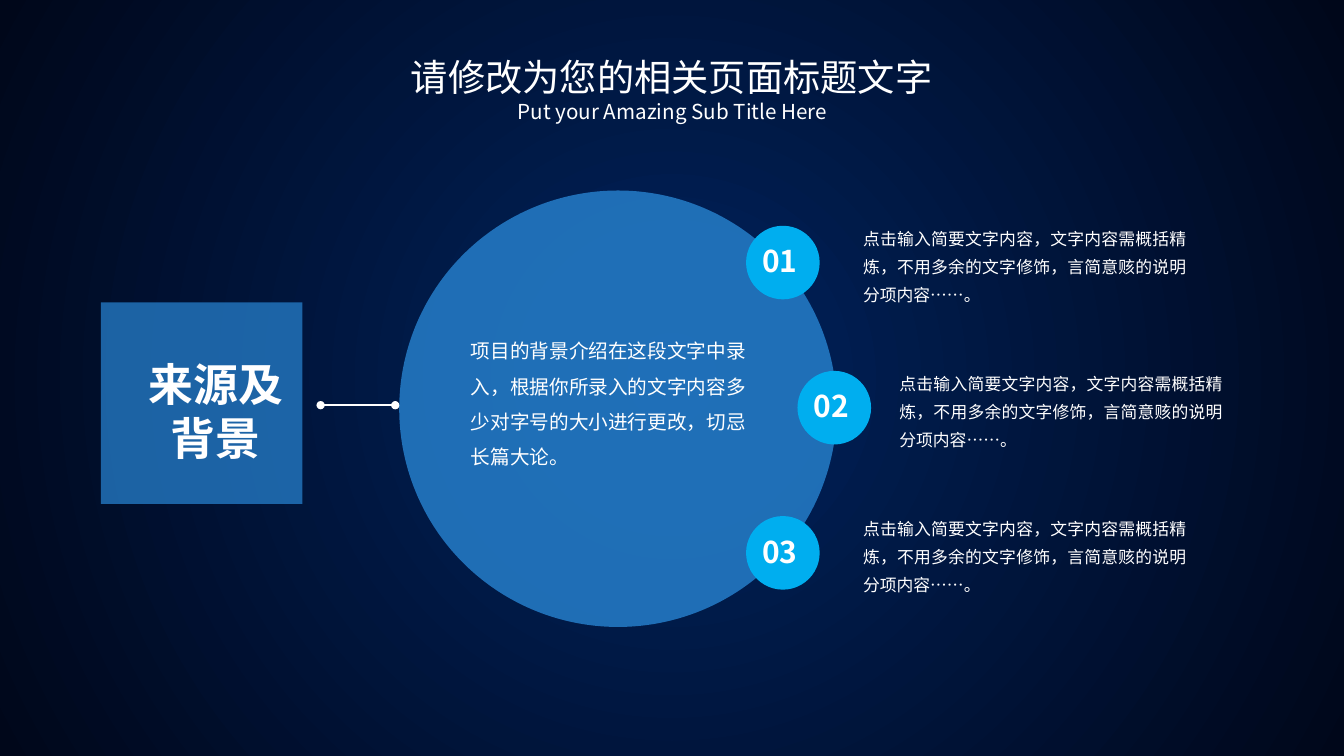
import pptx
import pptx.util
import pptx.dml.color
import pptx.enum.shapes
import pptx.enum.text
import pptx.oxml
import pptx.oxml.ns
from pptx.util import Inches

FONT = "Noto Sans CJK SC"
COLORS = {"white": "FFFFFF", "blue": "2378C2", "cyan": "00AEEF",
          "bg_center": "00235E", "bg_edge": "00071A"}
ALIGN = pptx.enum.text.PP_ALIGN
OVAL = pptx.enum.shapes.MSO_SHAPE.OVAL
ITEM_TEXT = "点击输入简要文字内容，文字内容需概括精炼，不用多余的文字修饰，言简意赅的说明分项内容……。"


def rgb(name):
    return pptx.dml.color.RGBColor.from_string(COLORS[name])


def add_xml(parent, tag, **attrs):
    el = parent.makeelement(pptx.oxml.ns.qn(tag), attrs)
    parent.append(el)
    return el


def place(sp, box):
    sp.left, sp.top, sp.width, sp.height = (Inches(v) for v in box)


def write(sp, text, size, align=ALIGN.LEFT, bold=False, spacing=None, inset=0, wrap=True):
    tf = sp.text_frame
    tf.word_wrap = wrap
    tf.auto_size = pptx.enum.text.MSO_AUTO_SIZE.NONE
    tf.vertical_anchor = pptx.enum.text.MSO_ANCHOR.TOP
    tf.margin_left = tf.margin_right = Inches(inset)
    tf.margin_top = tf.margin_bottom = Inches(inset / 2)
    p = tf.paragraphs[0]
    p.alignment = align
    p.line_spacing = spacing or 1.0
    p.space_before = pptx.util.Pt(0)
    r = p.add_run()
    r.text = text
    r.font.size = pptx.util.Pt(size)
    r.font.bold = bold
    r.font.color.rgb = rgb("white")
    r.font.name = FONT
    add_xml(r.font._element, "a:ea", typeface=FONT)


def add_text(shapes, box, text, size, **style):
    sp = shapes.add_textbox(*(Inches(v) for v in box))
    write(sp, text, size, **style)


def paint(sp, color, alpha=100):
    sp.shadow.inherit = False
    sp.line.fill.background()
    sp.fill.solid()
    sp.fill.fore_color.rgb = rgb(color)
    if alpha < 100:
        clr = sp.fill._xPr.find(".//" + pptx.oxml.ns.qn("a:srgbClr"))
        add_xml(clr, "a:alpha", val=str(alpha * 1000))


def add_circle(shapes, box, color, alpha=100):
    sp = shapes.add_shape(OVAL, *(Inches(v) for v in box))
    paint(sp, color, alpha)


def set_background(slide):
    fill = slide.background.fill
    fill.gradient()
    for stop, name in zip(fill.gradient_stops, ("bg_center", "bg_edge")):
        stop.color.rgb = rgb(name)
    grad = slide.background._cSld.find(".//" + pptx.oxml.ns.qn("a:gradFill"))
    grad.remove(grad.find(pptx.oxml.ns.qn("a:lin")))
    path = add_xml(grad, "a:path")
    path.set("path", "circle")
    add_xml(path, "a:fillToRect", l="50000", t="50000", r="50000", b="50000")


def add_heading(slide, x, y, w):
    title = slide.shapes.title
    place(title, (x, y, w, 0.45))
    write(title, "请修改为您的相关页面标题文字", 26.6, align=ALIGN.CENTER)
    add_text(slide.shapes, (x + 1.14, y + 0.44, w - 2.27, 0.25),
             "Put your Amazing Sub Title Here", 14.7, align=ALIGN.CENTER)


def rounded_outline(corners, cut, steps=8):
    """Replace each corner by a quadratic curve that starts and ends cut inches from it."""
    points = []
    for i, (cx, cy) in enumerate(corners):
        ends = []
        for nx, ny in (corners[i - 1], corners[(i + 1) % len(corners)]):
            t = cut / ((nx - cx) ** 2 + (ny - cy) ** 2) ** 0.5
            ends.append((cx + (nx - cx) * t, cy + (ny - cy) * t))
        (ax, ay), (bx, by) = ends
        for k in range(steps + 1):
            t = k / steps
            u = 1 - t
            points.append((u * u * ax + 2 * u * t * cx + t * t * bx,
                           u * u * ay + 2 * u * t * cy + t * t * by))
    return points


def add_hexagon(slide, x, y, w, h):
    tip, inset = 0.03, 0.54
    corners = [(x + inset, y), (x + w - inset, y), (x + w + tip, y + h / 2),
               (x + w - inset, y + h), (x + inset, y + h), (x - tip, y + h / 2)]
    points = rounded_outline(corners, 0.13)
    builder = slide.shapes.build_freeform(*points[0], scale=Inches(1))
    builder.add_line_segments(points[1:], close=True)
    paint(builder.convert_to_shape(), "blue", 80)
    add_text(slide.shapes, (x + 0.26, y + 0.5, 1.72, 1.18), "来源及背景", 32,
             align=ALIGN.CENTER, bold=True, inset=0.1)


def add_link(slide, x1, x2, y):
    line = slide.shapes.add_connector(pptx.enum.shapes.MSO_CONNECTOR.STRAIGHT,
                                      *(Inches(v) for v in (x1, y, x2, y)))
    line.line.color.rgb = rgb("white")
    line.line.width = pptx.util.Pt(1)
    ln = line.line._get_or_add_ln()
    for tag in ("a:headEnd", "a:tailEnd"):
        add_xml(ln, tag, type="oval")
    add_xml(line._element.spPr, "a:effectLst")


def add_main_circle(slide, x, y, w, h):
    add_circle(slide.shapes, (x, y, w, h), "blue", 90)
    add_text(slide.shapes, (x + 0.71, y + 1.36, 2.73, 1.41),
             "项目的背景介绍在这段文字中录入，根据你所录入的文字内容多少对字号的大小进行更改，切忌长篇大论。",
             14, align=ALIGN.JUSTIFY, spacing=1.5)


def add_item(slide, number, x, y, text_x):
    badge = slide.shapes.add_group_shape()
    add_circle(badge.shapes, (x, y, 0.73, 0.73), "cyan")
    add_text(badge.shapes, (x + 0.06, y + 0.12, 0.57, 0.46), f"{number:02}", 21.4,
             bold=True, inset=0.1, wrap=False)
    add_text(slide.shapes, (text_x, y - 0.05, 3.21, 0.84), ITEM_TEXT, 12,
             align=ALIGN.JUSTIFY, spacing=pptx.util.Pt(20))


def main():
    prs = pptx.Presentation()
    prs.slide_width, prs.slide_height = Inches(13.33), Inches(7.5)
    slide = prs.slides.add_slide(prs.slide_layouts[5])
    set_background(slide)
    add_heading(slide, 2.73, 0.54, 7.87)
    add_hexagon(slide, 1.02, 2.99, 2.24, 2.03)
    add_main_circle(slide, 3.96, 1.89, 4.34, 4.33)
    add_link(slide, 3.18, 3.92, 4.02)
    for i, (x, text_x) in enumerate([(7.4, 8.56), (7.91, 8.92), (7.4, 8.56)]):
        add_item(slide, i + 1, x, 2.24 + 1.44 * i, text_x)
    prs.save("out.pptx")


if __name__ == "__main__":
    main()
